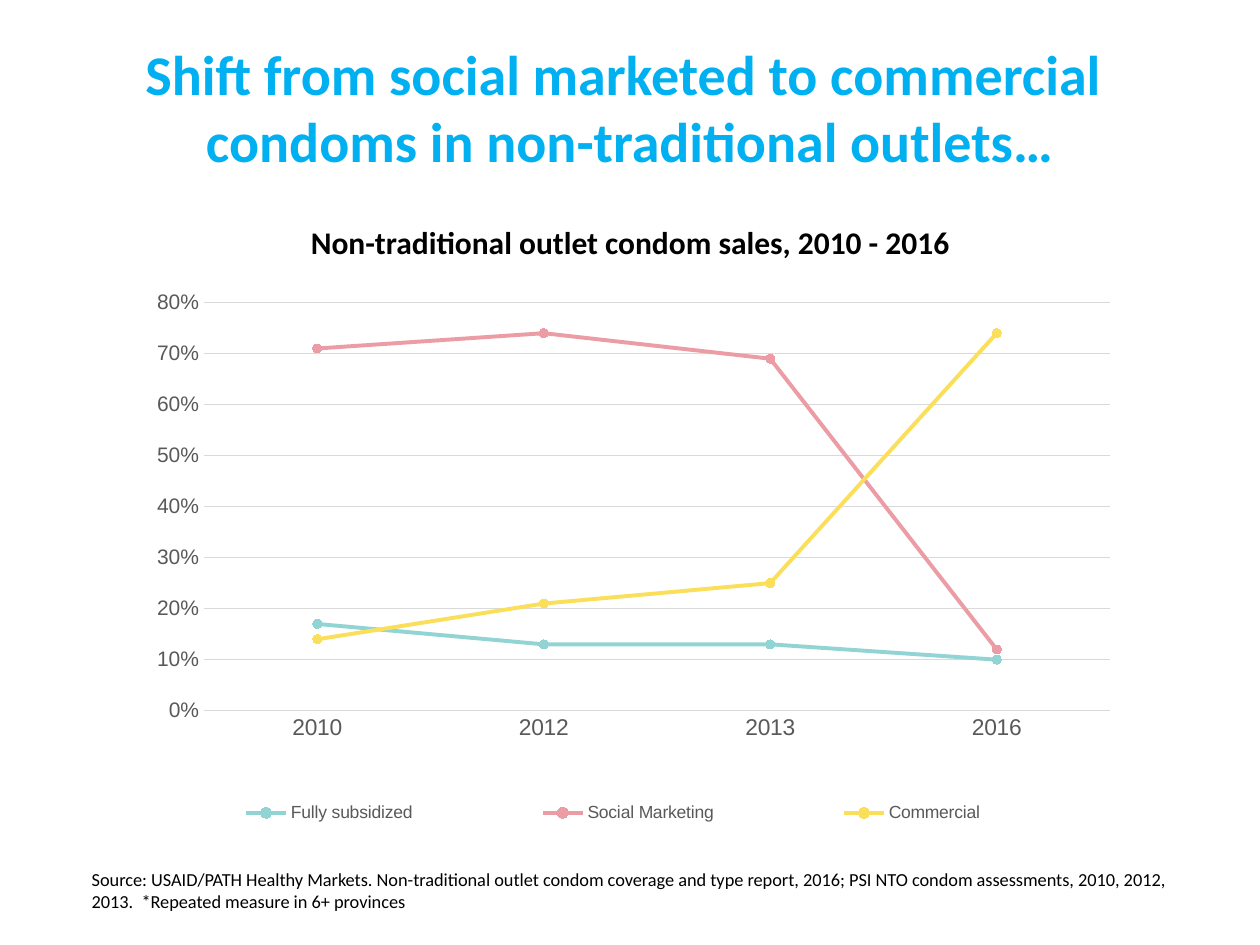
"""Build the slide on condom sales in non-traditional outlets."""
from lxml.etree import SubElement
from pptx import Presentation
from pptx.chart.data import CategoryChartData
from pptx.dml.color import RGBColor
from pptx.enum.chart import XL_CHART_TYPE, XL_LEGEND_POSITION, XL_MARKER_STYLE, XL_TICK_MARK
from pptx.enum.shapes import MSO_SHAPE
from pptx.enum.text import MSO_ANCHOR, PP_ALIGN
from pptx.oxml.ns import qn
from pptx.util import Cm, Pt

COLORS = {
    "white": "FFFFFF", "black": "000000", "heading": "00B0F0",
    "label": "595959", "grid": "D9D9D9",
    "Fully subsidized": "92D4D3", "Social Marketing": "EB9CA5", "Commercial": "FBDF5A",
}
SALES = {
    "Fully subsidized": (0.17, 0.13, 0.13, 0.10),
    "Social Marketing": (0.71, 0.74, 0.69, 0.12),
    "Commercial": (0.14, 0.21, 0.25, 0.74),
}


def style(font, name, size, color, bold=False):
    font.name, font.size, font.bold = name, Pt(size), bold
    font.color.rgb = RGBColor.from_string(COLORS[color])


def place(parent, position, inner, **fractions):
    for old in parent.findall(qn("c:layout")):
        parent.remove(old)
    layout = SubElement(parent, qn("c:layout"))
    parent.insert(position, layout)
    manual = SubElement(layout, qn("c:manualLayout"))
    if inner:
        SubElement(manual, qn("c:layoutTarget")).set("val", "inner")
    for mode in ("xMode", "yMode"):
        SubElement(manual, qn(f"c:{mode}")).set("val", "edge")
    for side, fraction in fractions.items():
        SubElement(manual, qn(f"c:{side}")).set("val", str(fraction))


prs = Presentation()
prs.slide_width, prs.slide_height = Cm(25.4), Cm(19.05)
slide = prs.slides.add_slide(prs.slide_layouts[6])

sales_data = CategoryChartData(number_format="0%")
sales_data.categories = ["2010", "2012", "2013", "2016"]
for channel, shares in SALES.items():
    sales_data.add_series(channel, shares)
sales = slide.shapes.add_chart(
    XL_CHART_TYPE.LINE_MARKERS, Cm(1.6), Cm(5.54), Cm(21.31), Cm(12.19), sales_data
).chart
sales.has_title = False
style(sales.font, "Arial", 10, "black")

for channel in sales.plots[0].series:
    color = RGBColor.from_string(COLORS[channel.name])
    channel.smooth = False
    channel.format.line.color.rgb = color
    channel.format.line.width = Pt(2.25)
    channel.marker.style = XL_MARKER_STYLE.CIRCLE
    channel.marker.size = 5
    channel.marker.format.fill.solid()
    channel.marker.format.fill.fore_color.rgb = color
    channel.marker.format.line.color.rgb = color

years, shares = sales.category_axis, sales.value_axis
for axis, size in ((years, 13), (shares, 12)):
    axis.major_tick_mark = axis.minor_tick_mark = XL_TICK_MARK.NONE
    style(axis.tick_labels.font, "Arial", size, "label")
shares.minimum_scale, shares.maximum_scale, shares.major_unit = 0, 0.8, 0.1
shares.tick_labels.number_format = "0%"
shares.tick_labels.number_format_is_linked = False
shares.format.line.fill.background()
shares.has_major_gridlines = True
for line in (years.format.line, shares.major_gridlines.format.line):
    line.color.rgb = RGBColor.from_string(COLORS["grid"])
    line.width = Pt(0.75)

sales.has_legend = True
sales.legend.position = XL_LEGEND_POSITION.BOTTOM
sales.legend.include_in_layout = False
style(sales.legend.font, "Arial", 10, "label")
chart_xml = sales.element
place(chart_xml.find(".//" + qn("c:plotArea")), 0, True, x=0.118, y=0.046, w=0.857, h=0.675)
place(chart_xml.find(".//" + qn("c:legend")), 1, False, x=0.04, y=0.86, w=0.93, h=0.06)

source = slide.shapes.add_textbox(Cm(1.6), Cm(17.37), Cm(22.76), Cm(1.19)).text_frame
source.word_wrap = True
source.text = (
    "Source: USAID/PATH Healthy Markets. Non-traditional outlet condom coverage and type report, "
    "2016; PSI NTO condom assessments, 2010, 2012, 2013.  *Repeated measure in 6+ provinces"
)
style(source.paragraphs[0].runs[0].font, "Calibri", 10.5, "black")

banners = (
    ("Non-traditional outlet condom sales, 2010 - 2016", (2.31, 4.37, 20.8, 1.02), 0.13, 18, "black"),
    ("Shift from social marketed to commercial \ncondoms in non-traditional outlets…",
     (0, 0.33, 25.4, 3.43), 0.34, 32, "heading"),
)
for wording, bounds, top_inset, size, color in banners:
    banner = slide.shapes.add_shape(MSO_SHAPE.RECTANGLE, *map(Cm, bounds))
    banner.shadow.inherit = False
    banner.fill.solid()
    banner.fill.fore_color.rgb = RGBColor.from_string(COLORS["white"])
    banner.line.fill.background()
    banner.text_frame.word_wrap = True
    banner.text_frame.vertical_anchor = MSO_ANCHOR.MIDDLE
    banner.text_frame.margin_top = Cm(top_inset)
    banner.text_frame.text = wording
    for paragraph in banner.text_frame.paragraphs:
        paragraph.alignment = PP_ALIGN.CENTER
        style(paragraph.runs[0].font, "Calibri", size, color, bold=True)

prs.save("out.pptx")
